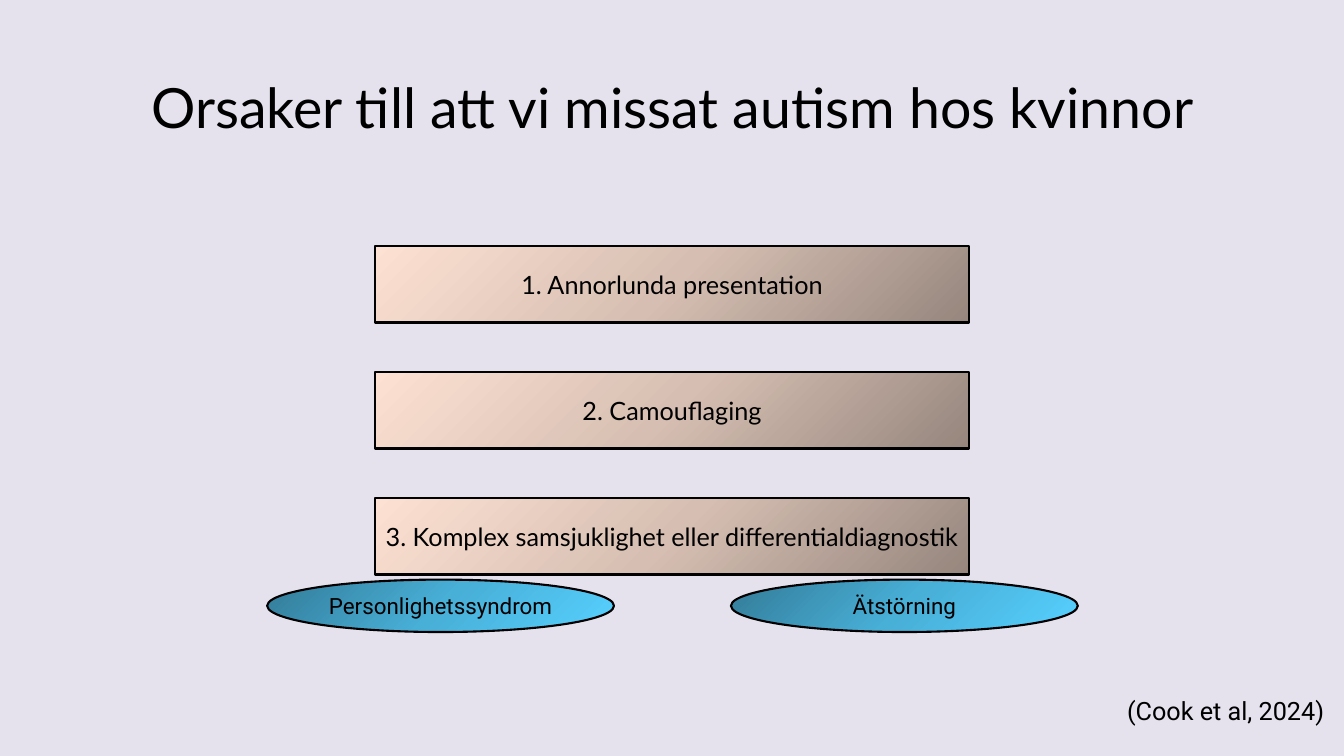
import pptx
import pptx.dml.color
import pptx.enum.shapes
import pptx.enum.text
import pptx.oxml
import pptx.oxml.ns
import pptx.util

RGBColor = pptx.dml.color.RGBColor
Inches = pptx.util.Inches
Shape = pptx.enum.shapes.MSO_SHAPE
Align = pptx.enum.text.PP_ALIGN

BLACK = RGBColor(0x00, 0x00, 0x00)
PAPER = RGBColor(0xE5, 0xE2, 0xEE)
SAND = [RGBColor(0x96, 0x86, 0x7D), RGBColor(0xD6, 0xBE, 0xB2), RGBColor(0xFD, 0xE2, 0xD3)]
BLUE = [RGBColor(0x33, 0x7B, 0x97), RGBColor(0x48, 0xAF, 0xD7), RGBColor(0x56, 0xD0, 0xFF)]
CORNER = '<a:path path="circle"><a:fillToRect l="100000" t="100000"/></a:path>'
SLANT = '<a:lin ang="2700000" scaled="0"/>'


class Deck:
    """Holds the style and the current slide, and draws its elements."""

    def __init__(self):
        self.show = pptx.Presentation()
        self.show.slide_width = Inches(13.33)
        self.show.slide_height = Inches(7.5)
        self.slide = self.show.slides.add_slide(self.show.slide_layouts[6])
        back = self.slide.background.fill
        back.solid()
        back.fore_color.rgb = PAPER

    def label(self, shape, text, font, size, align):
        frame = shape.text_frame
        frame.word_wrap = True
        frame.text = text
        line = frame.paragraphs[0]
        line.alignment = align
        style = line.runs[0].font
        style.name = font
        style.size = pptx.util.Pt(size)
        style.color.rgb = BLACK
        return line

    def text(self, place, text, font, size, align=Align.LEFT):
        box = self.slide.shapes.add_textbox(*map(Inches, place))
        return self.label(box, text, font, size, align)

    def title(self, place, text):
        line = self.text(place, text, "Lato", 39.6, Align.CENTER)
        line.line_spacing = 0.9
        box = self.slide.shapes[-1]
        box.text_frame.vertical_anchor = pptx.enum.text.MSO_ANCHOR.MIDDLE

    def blend(self, shape, shades, course):
        stops = "".join(
            f'<a:gs pos="{i * 50000}"><a:srgbClr val="{shade}"/></a:gs>'
            for i, shade in enumerate(shades)
        )
        shape.fill.gradient()
        props = shape._element.spPr
        old = props.find(pptx.oxml.ns.qn("a:gradFill"))
        new = pptx.oxml.parse_xml(
            f'<a:gradFill {pptx.oxml.ns.nsdecls("a")} rotWithShape="1">'
            f"<a:gsLst>{stops}</a:gsLst>{course}</a:gradFill>"
        )
        props.replace(old, new)

    def block(self, kind, place, text, font, size, shades, course):
        shape = self.slide.shapes.add_shape(kind, *map(Inches, place))
        shape.shadow.inherit = False
        self.blend(shape, shades, course)
        shape.line.color.rgb = BLACK
        shape.line.width = pptx.util.Pt(1.5)
        frame = shape.text_frame
        frame.margin_left = frame.margin_right = Inches(0.05)
        frame.vertical_anchor = pptx.enum.text.MSO_ANCHOR.MIDDLE
        self.label(shape, text, font, size, Align.CENTER)

    def bar(self, top, text):
        self.block(Shape.RECTANGLE, (3.72, top, 5.89, 0.76), text, "Lato", 18, SAND, CORNER)

    def oval(self, left, text):
        self.block(Shape.OVAL, (left, 5.75, 3.44, 0.52), text, "Roboto", 16, BLUE, SLANT)


def main():
    deck = Deck()
    deck.title((0.92, 0.65, 11.5, 0.89), "Orsaker till att vi missat autism hos kvinnor")
    causes = [
        "Annorlunda presentation",
        "Camouflaging",
        "Komplex samsjuklighet eller differentialdiagnostik",
    ]
    for i, cause in enumerate(causes):
        deck.bar(2.44 + i * 1.25, f"{i + 1}. {cause}")
    deck.oval(2.65, "Personlighetssyndrom")
    deck.oval(7.25, "Ätstörning")
    deck.text((11.08, 6.85, 2.25, 0.4), "(Cook et al, 2024)", "Roboto", 18)
    deck.show.save("out.pptx")


if __name__ == "__main__":
    main()
